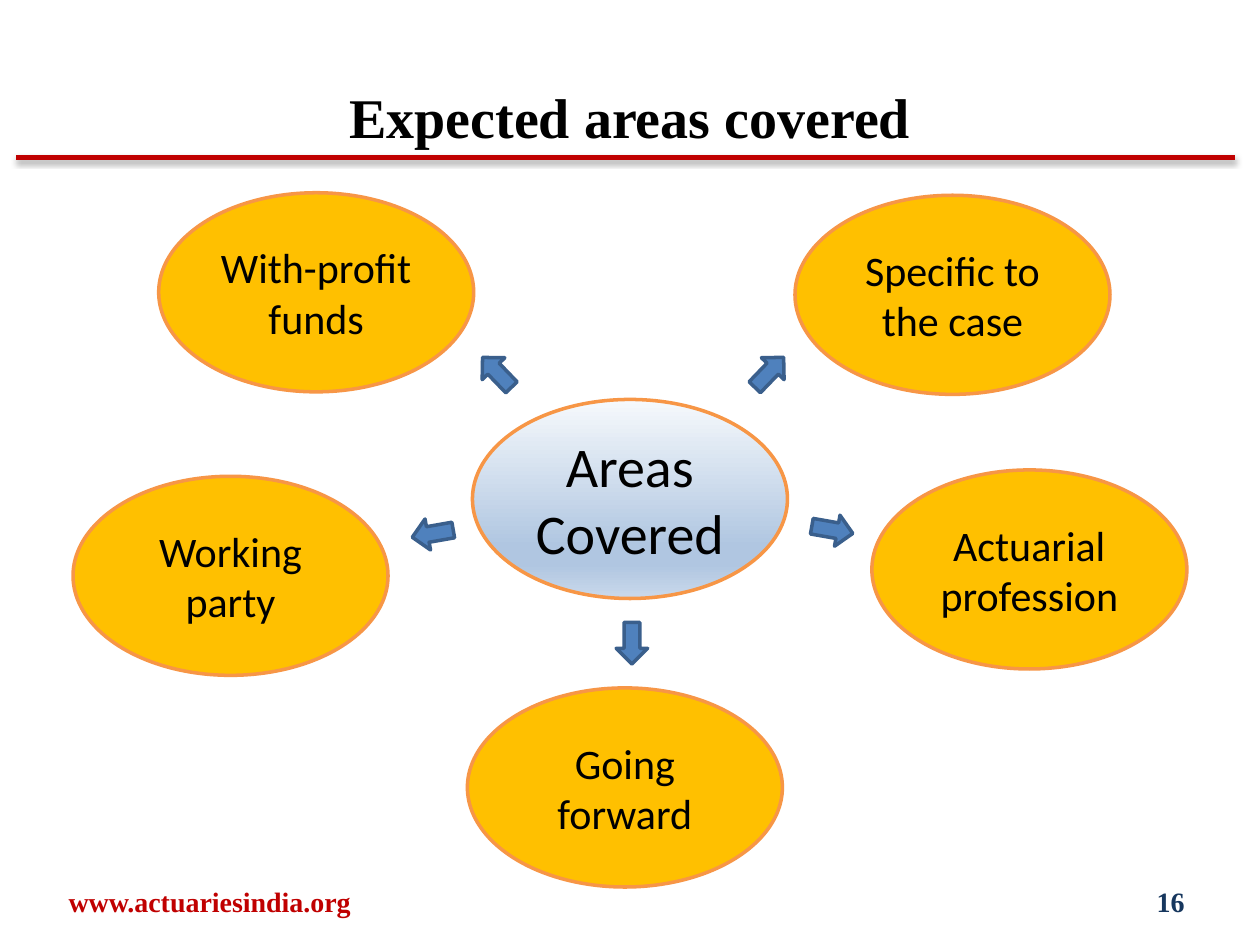
import pptx
import pptx.util
import pptx.dml.color
import pptx.enum.shapes
import pptx.enum.text
import pptx.oxml
import pptx.oxml.ns
from pptx.util import Inches

COLORS = {
    "text": "000000", "red": "C00000", "navy": "17375E",
    "topic": "FFC000", "outline": "F79646",
    "arrow": "4F81BD", "arrow_line": "3A5F8C",
}
HUB_STOPS = [(0, "F6F9FC"), (74, "B0C6E1"), (83, "B0C6E1"), (100, "CAD9EB")]
HEADING_FONT, BODY_FONT = "Times New Roman", "Calibri"
OVAL_W, OVAL_H = 2.5, 1.58
ARROW_W, ARROW_H = 0.25, 0.33

# Topic text, oval (left, top), arrow (left, top), arrow rotation
TOPICS = [
    ("With-profit funds", (1.26, 1.53), (3.82, 2.79), 316),
    ("Specific to the case", (6.31, 1.55), (5.98, 2.79), 44),
    ("Actuarial profession", (6.92, 3.73), (6.48, 4.04), 100),
    ("Going forward", (3.71, 5.46), (4.89, 4.94), 180),
    ("Working party", (0.58, 3.78), (3.31, 4.07), 260),
]

SHAPE = pptx.enum.shapes.MSO_SHAPE
ALIGN = pptx.enum.text.PP_ALIGN


def rgb(name):
    return pptx.dml.color.RGBColor.from_string(COLORS[name])


def box_inches(box):
    return [Inches(v) for v in box]


def set_text(sp, text, size, font, color="text", bold=False, align=ALIGN.CENTER):
    tf = sp.text_frame
    tf.word_wrap = True
    tf.vertical_anchor = pptx.enum.text.MSO_ANCHOR.MIDDLE
    p = tf.paragraphs[0]
    p.alignment = align
    r = p.add_run()
    r.text = text
    r.font.size = pptx.util.Pt(size)
    r.font.name = font
    r.font.bold = bold
    r.font.color.rgb = rgb(color)


def add_outlined(s, kind, box, fill, line):
    sp = s.shapes.add_shape(kind, *box_inches(box))
    sp.shadow.inherit = False
    sp.fill.solid()
    sp.fill.fore_color.rgb = rgb(fill)
    sp.line.color.rgb = rgb(line)
    sp.line.width = pptx.util.Pt(2)
    return sp


def add_oval(s, left, top, text, size):
    sp = add_outlined(s, SHAPE.OVAL, (left, top, OVAL_W, OVAL_H), "topic", "outline")
    set_text(sp, text, size, BODY_FONT)
    return sp


def add_arrow(s, left, top, rotation):
    sp = add_outlined(s, SHAPE.UP_ARROW, (left, top, ARROW_W, ARROW_H),
                      "arrow", "arrow_line")
    sp.rotation = rotation


def add_hub(s, left, top):
    sp = add_oval(s, left, top, "Areas Covered", 32)
    sp.fill.gradient()
    sp.fill.gradient_angle = 270
    # Replace the default stops with the four-stop blend
    stops = sp._element.spPr.find(".//" + pptx.oxml.ns.qn("a:gsLst"))
    for stop in list(stops):
        stops.remove(stop)
    for pos, color in HUB_STOPS:
        stops.append(pptx.oxml.parse_xml(
            f'<a:gs {pptx.oxml.ns.nsdecls("a")} pos="{pos * 1000}">'
            f'<a:srgbClr val="{color}"/></a:gs>'))


def add_header(s, box):
    title = s.shapes.title
    title.left, title.top, title.width, title.height = box_inches(box)
    set_text(title, "Expected areas covered", 32, HEADING_FONT, bold=True)
    # Red rule with a soft shadow
    rule = s.shapes.add_connector(pptx.enum.shapes.MSO_CONNECTOR.STRAIGHT,
                                  *box_inches((0.13, 1.25, 9.8, 1.25)))
    rule.line.color.rgb = rgb("red")
    rule.line.width = pptx.util.Pt(3)
    blur, dist = pptx.util.Pt(3.1), pptx.util.Pt(1.6)
    rule._element.spPr.append(pptx.oxml.parse_xml(
        f'<a:effectLst {pptx.oxml.ns.nsdecls("a")}>'
        f'<a:outerShdw blurRad="{blur}" dist="{dist}" dir="5400000" rotWithShape="0">'
        f'<a:srgbClr val="{COLORS["text"]}"><a:alpha val="38000"/></a:srgbClr>'
        '</a:outerShdw></a:effectLst>'))


def add_footer_text(s, box, text, color, align):
    sp = s.shapes.add_textbox(*box_inches(box))
    set_text(sp, text, 16, HEADING_FONT, color, True, align)


def main():
    prs = pptx.Presentation()
    prs.slide_width, prs.slide_height = Inches(10), Inches(7.5)
    s = prs.slides.add_slide(prs.slide_layouts[5])

    # Header and footer
    add_header(s, (0.5, 0.3, 9, 1.25))
    add_footer_text(s, (0.08, 6.95, 3.17, 0.4), "www.actuariesindia.org",
                    "red", ALIGN.CENTER)
    add_footer_text(s, (7.17, 6.95, 2.33, 0.4), "16", "navy", ALIGN.RIGHT)

    # Hub with arrows out to the topics
    add_hub(s, 3.75, 3.17)
    for text, oval, arrow, rotation in TOPICS:
        add_arrow(s, *arrow, rotation)
        add_oval(s, *oval, text, 24)

    prs.save("out.pptx")


if __name__ == "__main__":
    main()
